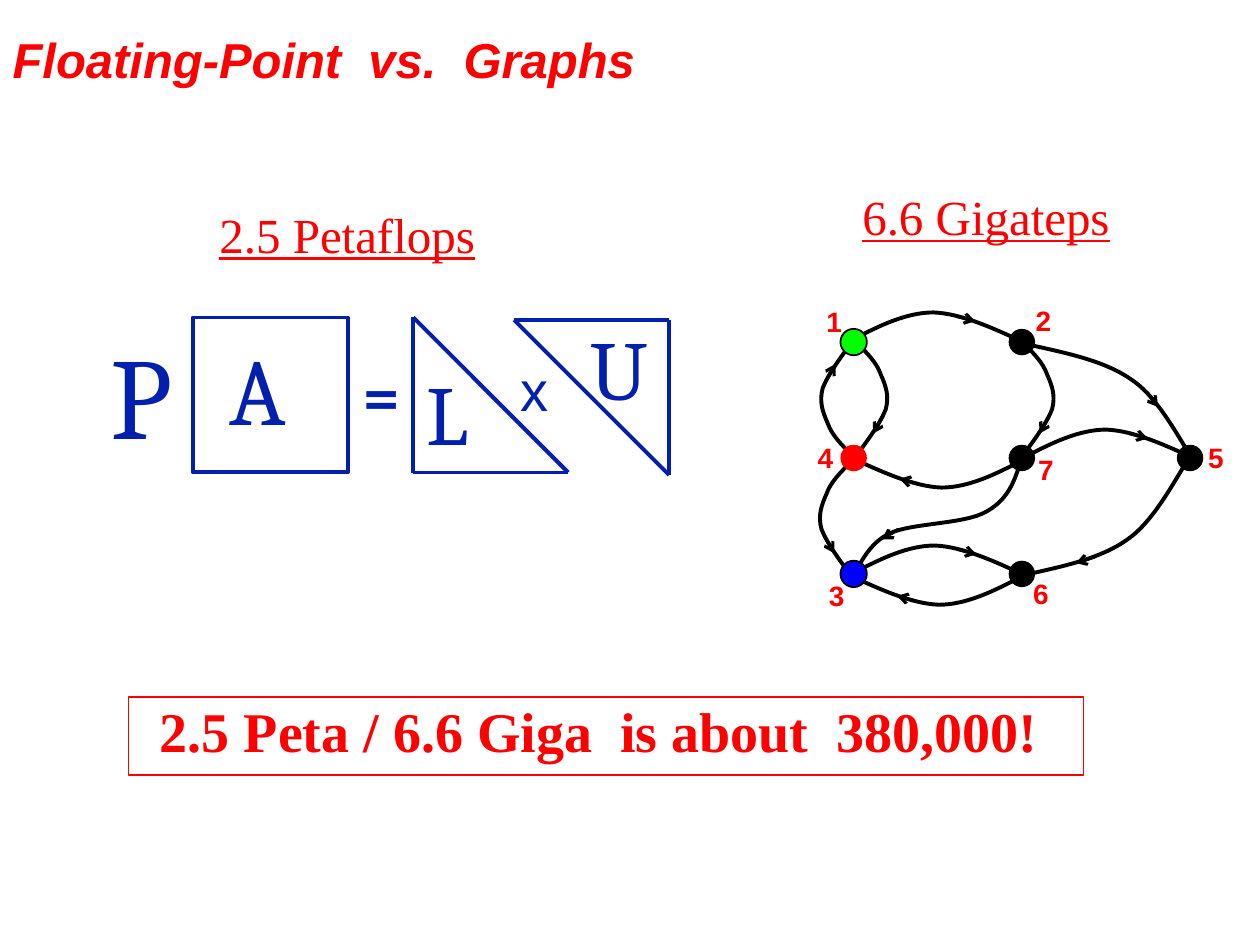
from itertools import combinations
from lxml import etree
from pptx import Presentation
from pptx.dml.color import RGBColor
from pptx.enum.shapes import MSO_CONNECTOR, MSO_SHAPE
from pptx.enum.text import MSO_ANCHOR, MSO_AUTO_SIZE, PP_ALIGN
from pptx.oxml.ns import qn
from pptx.util import Inches, Pt

RECT, OVAL, STRAIGHT = MSO_SHAPE.RECTANGLE, MSO_SHAPE.OVAL, MSO_CONNECTOR.STRAIGHT
LEFT, CENTER = PP_ALIGN.LEFT, PP_ALIGN.CENTER
TOP, MIDDLE = MSO_ANCHOR.TOP, MSO_ANCHOR.MIDDLE
GROW, FIXED = MSO_AUTO_SIZE.SHAPE_TO_FIT_TEXT, MSO_AUTO_SIZE.NONE
RED, BLUE, BLACK = "FF0000", "021FAE", "000000"


def write(sp, text, color, size, align=LEFT, anchor=TOP, wrap=True, fit=GROW, **font):
    tf = sp.text_frame
    tf.word_wrap, tf.auto_size, tf.vertical_anchor = wrap, fit, anchor
    p = tf.paragraphs[0]
    p.alignment = align
    r = p.add_run()
    r.text = text
    r.font.size = Pt(size)
    r.font.color.rgb = RGBColor.from_string(color)
    for name, value in font.items():
        setattr(r.font, name, value)
    return tf


def stroke(sp, color, width, arrow=False):
    """Set the outline, an optional arrowhead, and no shadow."""
    sp.line.color.rgb = RGBColor.from_string(color)
    sp.line.width = Pt(width)
    if arrow:
        etree.SubElement(sp.line._ln, qn("a:tailEnd"), type="arrow")
    etree.SubElement(sp._element.spPr, qn("a:effectLst"))


prs = Presentation()
prs.slide_width, prs.slide_height = Inches(10), Inches(7.5)
s = prs.slides.add_slide(prs.slide_layouts[5])
shapes = s.shapes

# Title
sp = shapes.title
sp.left, sp.top, sp.width, sp.height = map(Inches, (0, 0.19, 9.75, 0.56))
write(sp, "Floating-Point  vs.  Graphs", RED, 28, anchor=MIDDLE, fit=FIXED,
      name="Arial", bold=True, italic=True)

# Matrix equation PA = L x U
equation = shapes.add_group_shape().shapes
side = 1.23
sp = equation.add_shape(RECT, *map(Inches, (1.53, 2.52, side, side)))
sp.fill.background()
stroke(sp, BLUE, 2.25)

lower = [(3.28, 2.52), (3.28, 2.52 + side), (3.28 + side, 2.52 + side)]
upper = [(5.31, 2.54), (5.31, 2.54 + side), (5.31 - side, 2.54)]
for triangle in (lower, upper):
    for start, end in combinations(triangle, 2):
        stroke(equation.add_connector(STRAIGHT, *map(Inches, start + end)), BLUE, 2.25)

for text, box, size, wrap, font in [
    ("=", (2.78, 2.77, 0.49, 0.7), 36, False, dict(name="Cambria", bold=True)),
    ("x", (4.03, 2.77, 0.42, 0.63), 32, False, dict(name="Arial")),
    ("P", (0.78, 2.52, 0.71, 1.2), 66, False, dict(name="Cambria")),
    ("A", (1.72, 2.58, 0.71, 1), 54, True, dict(name="Cambria")),
    ("L", (3.29, 2.82, 0.71, 0.9), 48, True, dict(name="Cambria")),
    ("U", (4.59, 2.46, 0.71, 0.9), 48, True, dict(name="Cambria")),
]:
    write(equation.add_textbox(*map(Inches, box)), text, BLUE, size, wrap=wrap, **font)

# Edge shapes: Bezier points relative to the start, then the arrow's two ends
bow = [(0, 0), (0.21, -0.11), (0.43, -0.22), (0.65, -0.22),
       (0.87, -0.21), (1.11, -0.1), (1.35, 0.01)]
bulge = [(0, 0), (0.08, 0.08), (0.16, 0.16), (0.19, 0.25),
         (0.23, 0.34), (0.26, 0.42), (0.23, 0.53),
         (0.19, 0.63), (0.1, 0.76), (0, 0.89)]
sweep = [(0, 0), (-0.08, 0.11), (-0.26, 0.48), (-0.48, 0.63),
         (-0.7, 0.79), (-1.02, 0.85), (-1.33, 0.92)]
snake = [(0, 0), (0.05, -0.05), (0.11, -0.23), (0.29, -0.31),
         (0.47, -0.39), (0.88, -0.38), (1.05, -0.48),
         (1.23, -0.58), (1.28, -0.74), (1.33, -0.91)]
bow_arrow = [(0.83, -0.19), (0.98, -0.15)]
bulge_arrow = [(0.21, 0.58), (0.13, 0.72)]

# Edges: curve, arrow, start x, start y, horizontal and vertical flips
graph = shapes.add_group_shape().shapes
for curve, arrow, x, y, fx, fy in [
    (bulge, bulge_arrow, 6.76, 3.61, -1, -1),
    (bulge, bulge_arrow, 6.8, 2.72, 1, 1),
    (bulge, bulge_arrow, 6.75, 3.67, -1, 1),
    (bulge, bulge_arrow, 8.12, 2.72, 1, 1),
    (bow, bow_arrow, 6.76, 2.7, 1, 1),
    (bow, bow_arrow, 8.13, 3.63, 1, 1),
    (bow, bow_arrow, 6.77, 4.55, 1, 1),
    (bow, bow_arrow, 8.1, 4.58, -1, -1),
    (bow, bow_arrow, 8.12, 3.65, -1, -1),
    (sweep, [(-0.74, 0.77), (-0.89, 0.82)], 9.43, 3.65, 1, 1),
    (sweep, [(-0.37, 0.54), (-0.28, 0.42)], 9.47, 3.65, 1, -1),
    (snake, [(0.35, -0.34), (0.22, -0.26)], 6.78, 4.54, 1, 1),
]:
    pts = [(Inches(x + fx * dx), Inches(y + fy * dy)) for dx, dy in curve]
    builder = graph.build_freeform(*pts[0])
    builder.add_line_segments(pts[1:], close=False)
    sp = builder.convert_to_shape()
    # Turn each three straight segments into one cubic Bezier segment
    outline = sp._element.spPr.find(".//" + qn("a:path"))
    segments = outline.findall(qn("a:lnTo"))
    for i in range(0, len(segments), 3):
        cubic = etree.SubElement(outline, qn("a:cubicBezTo"))
        for segment in segments[i:i + 3]:
            cubic.append(segment[0])
            outline.remove(segment)
    sp.fill.background()
    stroke(sp, BLACK, 2.25)
    (x1, y1), (x2, y2) = [(x + fx * dx, y + fy * dy) for dx, dy in arrow]
    sp = graph.add_connector(STRAIGHT, *map(Inches, (x1, y1, x2, y2)))
    stroke(sp, BLACK, 1.75, arrow=True)

# Nodes on a grid: label, column, row, fill, outlined, label position
for label, col, row, fill, outlined, tx, ty in [
    ("1", 0, 0, "00FF00", True, 6.46, 2.37),
    ("2", 1, 0, BLACK, False, 8.12, 2.36),
    ("3", 0, 2, "0000FF", True, 6.48, 4.54),
    ("4", 0, 1, RED, False, 6.39, 3.45),
    ("5", 2, 1, BLACK, False, 9.49, 3.45),
    ("6", 1, 2, BLACK, False, 8.1, 4.53),
    ("7", 1, 1, BLACK, False, 8.14, 3.54),
]:
    box = (6.67 + 1.335 * col, 2.61 + 0.92 * row, 0.21, 0.21)
    sp = graph.add_shape(OVAL, *map(Inches, box))
    sp.shadow.inherit = False
    sp.fill.solid()
    sp.fill.fore_color.rgb = RGBColor.from_string(fill)
    if outlined:
        sp.line.color.rgb = RGBColor.from_string(BLACK)
        sp.line.width = Pt(1)
    else:
        sp.line.fill.background()
    sp = graph.add_textbox(*map(Inches, (tx, ty, 0.32, 0.37)))
    write(sp, label, RED, 16, wrap=False, name="Arial", bold=True)

# Headings and the boxed conclusion
for text, box, size, framed in [
    ("2.5 Peta / 6.6 Giga  is about  380,000! ", (1.02, 5.53, 7.58, 0.62), 32, True),
    ("2.5 Petaflops", (1.36, 1.62, 2.79, 0.62), 28, False),
    ("6.6 Gigateps", (6.43, 1.48, 2.79, 0.62), 28, False),
]:
    if framed:
        sp = shapes.add_shape(RECT, *map(Inches, box))
        sp.fill.background()
        stroke(sp, RED, 1)
    else:
        sp = shapes.add_textbox(*map(Inches, box))
    tf = write(sp, text, RED, size, align=CENTER, fit=FIXED,
               name="Times New Roman", bold=framed, underline=not framed)
    tf.margin_left = tf.margin_top = tf.margin_bottom = 0
    tf.margin_right = Inches(0.03)
    p = tf.paragraphs[0]
    p.space_before = Pt(9.9)
    p._p.get_or_add_pPr().set("marL", str(Inches(0.03)))

prs.save("out.pptx")
